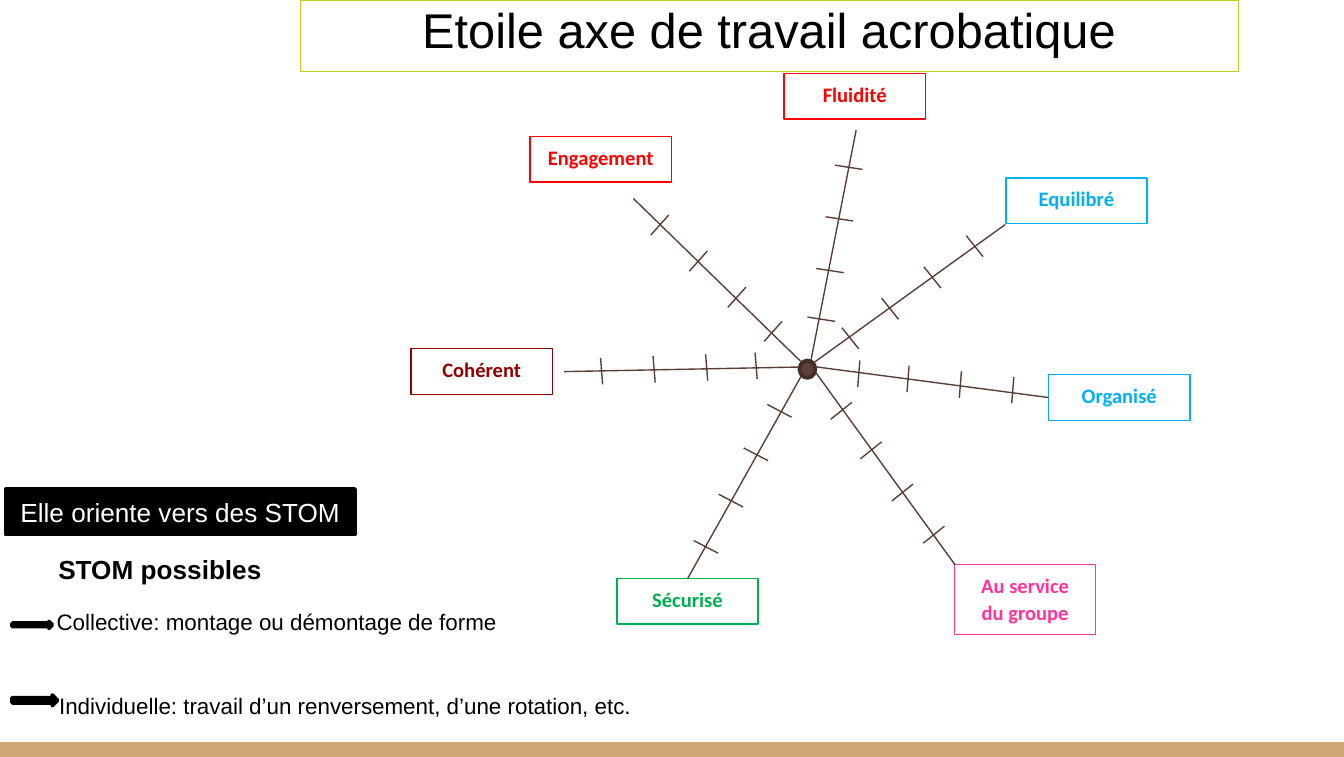
"""Build the slide with the star of acrobatic work axes."""
from pptx import Presentation
from pptx.dml.color import RGBColor as Rgb
from pptx.enum.shapes import MSO_CONNECTOR as Link, MSO_SHAPE as Kind
from pptx.enum.text import MSO_ANCHOR as Anchor, PP_ALIGN as Align
from pptx.oxml.ns import qn
from pptx.util import Cm, Pt
from lxml.etree import SubElement as Sub

HUES = {
    "red": "FF0000", "blue": "00B0F0", "wine": "920000", "pink": "FF3399",
    "green": "00B050", "brown": "5A3D34", "core": "5D4037", "rim": "432E28",
    "sand": "CCA677", "lime": "C2D01D", "black": "000000", "white": "FFFFFF",
}

WIDE, HIGH = 25.4, 14.3
AXES = [
    dict(text="Engagement", hue="red", box=(10.02, 2.58), tip=(11.97, 3.75),
         root=(15.27, 6.96), far=(12.47, 4.25), near=(14.61, 6.26), half=(0.17, -0.19)),
    dict(text="Fluidité", hue="red", box=(14.82, 1.39), tip=(16.18, 2.46),
         root=(15.29, 6.99), far=(16.04, 3.16), near=(15.52, 6.03), half=(0.26, 0.04)),
    dict(text="Equilibré", hue="blue", box=(19.01, 3.36), tip=(19, 4.24),
         root=(15.27, 6.93), far=(18.42, 4.65), near=(16.07, 6.39), half=(0.16, 0.2)),
    dict(text="Organisé", hue="blue", box=(19.82, 7.08), tip=(19.84, 7.47), side=1,
         root=(15.27, 6.91), far=(19.14, 7.37), near=(16.23, 7.06), half=(-0.02, 0.25)),
    dict(text="Au service du groupe", hue="pink", box=(18.04, 10.67), tip=(18.05, 10.67),
         tall=1.32, root=(15.34, 6.93), far=(17.65, 10.1), near=(15.9, 7.76), half=(-0.2, 0.16)),
    dict(text="Sécurisé", hue="green", box=(11.66, 10.93), tip=(12.98, 10.92), side=0,
         root=(15.24, 6.93), far=(13.34, 10.33), near=(14.73, 7.76), half=(-0.23, -0.12)),
    dict(text="Cohérent", hue="wine", box=(7.77, 6.59), tip=(10.66, 7.02),
         root=(15.27, 6.93), far=(11.37, 7.01), near=(14.29, 6.91), half=(-0.02, -0.25)),
]
STEPS = (0, 0.34, 0.68, 1)

NOTES = [
    ("STOM possibles", (0.37, 10.32, 5.31, 0.86), 14, True),
    ("Collective: montage ou démontage de forme ", (0.79, 11.35, 8.89, 0.79), 12, False),
    ("Individuelle: travail d’un renversement, d’une rotation, etc. ",
     (0.84, 12.95, 11.38, 0.81), 12, False),
]
ARROWS = [(0.23, 11.74, 0.76, 0.13), (0.23, 13.13, 0.86, 0.2)]

LABEL = {"name": "Calibri", "size": Pt(11), "bold": True}
PAD = {"margin_left": Cm(0.25), "margin_right": Cm(0.25),
       "margin_top": Cm(0.13), "margin_bottom": Cm(0.13),
       "word_wrap": True, "vertical_anchor": Anchor.TOP}


def apply(item, form):
    for key, val in form.items():
        setattr(item, key, val)


def tint(hue):
    return Rgb.from_string(HUES[hue])


def write(shape, text, hue, font, lead=1.0, **frame):
    apply(shape.text_frame, PAD | frame)
    para = shape.text_frame.paragraphs[0]
    apply(para, {"alignment": Align.CENTER, "line_spacing": lead})
    run = para.add_run()
    run.text = text
    apply(run.font, font)
    run.font.color.rgb = tint(hue)


def draw(tree, kind, place, fill=None, edge=None, width=0.75):
    shape = tree.add_shape(kind, *map(Cm, place))
    shape.shadow.inherit = False
    if fill:
        shape.fill.solid()
        shape.fill.fore_color.rgb = tint(fill)
    else:
        shape.fill.background()
    if edge:
        shape.line.color.rgb = tint(edge)
        shape.line.width = Pt(width)
    else:
        shape.line.fill.background()
    return shape


def rule(tree, start, end):
    line = tree.add_connector(Link.STRAIGHT, *map(Cm, (*start, *end)))
    line.line.color.rgb = tint("brown")
    line.line.width = Pt(0.75)
    Sub(line._element.spPr, qn("a:effectLst"))
    return line


def spoke(tree, axis):
    place = (*axis["box"], 2.67, axis.get("tall", 0.86))
    box = draw(tree, Kind.RECTANGLE, place, "white", axis["hue"])
    write(box, axis["text"], axis["hue"], LABEL, 1.07)
    line = rule(tree, axis["tip"], axis["root"])
    if "side" in axis:
        line.begin_connect(box, axis["side"])
    for step in STEPS:
        mid = [f + (n - f) * step for f, n in zip(axis["far"], axis["near"])]
        rule(tree, [m - h for m, h in zip(mid, axis["half"])],
             [m + h for m, h in zip(mid, axis["half"])])


def main():
    deck = Presentation()
    apply(deck, {"slide_width": Cm(WIDE), "slide_height": Cm(HIGH)})
    tree = deck.slides.add_slide(deck.slide_layouts[6]).shapes

    draw(tree, Kind.RECTANGLE, (0, 14.02, WIDE, HIGH - 14.02), "sand")
    title = draw(tree, Kind.RECTANGLE, (5.68, 0, 17.73, 1.35), edge="lime")
    write(title, "Etoile axe de travail acrobatique", "black",
          {"name": "Arial", "size": Pt(26.1)}, vertical_anchor=Anchor.BOTTOM,
          margin_top=Cm(0.25), margin_bottom=Cm(0.25))

    for axis in AXES:
        spoke(tree, axis)
    draw(tree, Kind.OVAL, (15.11, 6.81, 0.3, 0.33), "core", "rim", 2)

    tag = draw(tree, Kind.RECTANGLE, (0.11, 9.24, 6.6, 0.86), "black", "black", 2)
    write(tag, "Elle oriente vers des STOM", "white",
          {"name": "Arial", "size": Pt(14)}, word_wrap=False)
    for place in ARROWS:
        draw(tree, Kind.RIGHT_ARROW, place, "black", "black", 2)
    for text, place, size, bold in NOTES:
        write(tree.add_textbox(*map(Cm, place)), text, "black",
              {"name": "Arial", "size": Pt(size), "bold": bold})
    deck.save("out.pptx")


if __name__ == "__main__":
    main()
